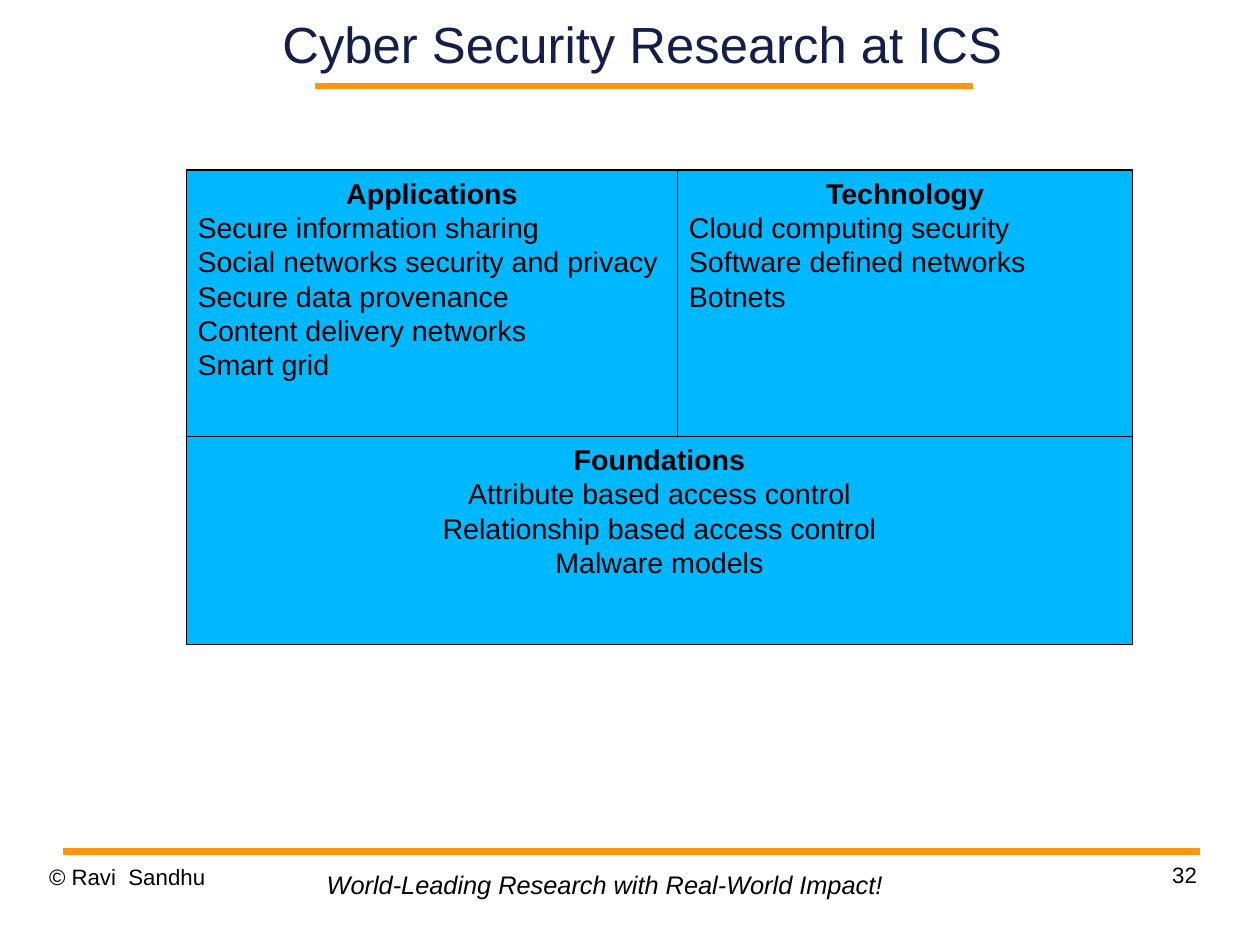
from lxml.etree import SubElement
from pptx import Presentation
from pptx.dml.color import RGBColor as RGB
from pptx.enum.shapes import MSO_CONNECTOR as Connector, MSO_SHAPE as Shape
from pptx.enum.text import MSO_ANCHOR as Anchor, PP_ALIGN as Align
from pptx.oxml.ns import qn
from pptx.util import Cm, Pt

# Content
TITLE = "Cyber Security Research at ICS"
APPLICATIONS = ("Applications", [
    "Secure information sharing",
    "Social networks security and privacy",
    "Secure data provenance",
    "Content delivery networks",
    "Smart grid",
])
TECHNOLOGY = ("Technology", [
    "Cloud computing security",
    "Software defined networks",
    "Botnets",
])
FOUNDATIONS = ("Foundations", [
    "Attribute based access control",
    "Relationship based access control",
    "Malware models",
])
COPYRIGHT = "© Ravi  Sandhu"
SLOGAN = "World-Leading Research with Real-World Impact!"
PAGE_NUMBER = "32"

THEME = {
    "font": "Arial",
    "title": RGB(0x13, 0x1F, 0x49),
    "text": RGB(0, 0, 0),
    "rule": RGB(0xFF, 0x95, 0x0E),
    "block": RGB(0x00, 0xB8, 0xFF),
    "title_size": 32,
    "block_size": 18,
    "slogan_size": 16,
    "footer_size": 14,
    "rule_width": 4.31,
    "border_width": 0.75,
}

# Layout in cm: block edges are shared by neighbours
LEFT, MIDDLE, RIGHT = 4.14, 15.06, 25.17
TOP, SPLIT, BOTTOM = 3.78, 9.7, 14.33
BLOCKS = [
    (FOUNDATIONS, LEFT, SPLIT, RIGHT, BOTTOM, Align.CENTER),
    (APPLICATIONS, LEFT, TOP, MIDDLE, SPLIT, Align.LEFT),
    (TECHNOLOGY, MIDDLE, TOP, RIGHT, SPLIT, Align.LEFT),
]
RULES = [(7.01, 21.62, 1.91), (1.4, 26.67, 18.92)]


def write(paragraph, text, size, color=THEME["text"], align=Align.LEFT,
          bold=False, italic=False, spacing=None):
    paragraph.alignment = align
    if spacing:
        paragraph.line_spacing = spacing
    run = paragraph.add_run()
    run.text = text
    font = run.font
    font.name, font.size = THEME["font"], Pt(size)
    font.bold, font.italic = bold, italic
    font.color.rgb = color


def add_text(slide, text, left, top, width, height, anchor=Anchor.TOP,
             inset=True, wrap=True, **text_format):
    box = slide.shapes.add_textbox(Cm(left), Cm(top), Cm(width), Cm(height))
    frame = box.text_frame
    frame.word_wrap, frame.vertical_anchor = wrap, anchor
    if not inset:
        frame.margin_left = frame.margin_right = 0
        frame.margin_top = frame.margin_bottom = 0
    write(frame.paragraphs[0], text, **text_format)


def add_rule(slide, start, end, y):
    line = slide.shapes.add_connector(
        Connector.STRAIGHT, Cm(start), Cm(y), Cm(end), Cm(y))
    line.line.color.rgb = THEME["rule"]
    line.line.width = Pt(THEME["rule_width"])
    SubElement(line._element.spPr, qn("a:effectLst"))


def add_block(slide, content, left, top, right, bottom, align):
    heading, topics = content
    block = slide.shapes.add_shape(
        Shape.RECTANGLE, Cm(left), Cm(top), Cm(right - left), Cm(bottom - top))
    block.shadow.inherit = False
    block.fill.solid()
    block.fill.fore_color.rgb = THEME["block"]
    block.line.color.rgb = THEME["text"]
    block.line.width = Pt(THEME["border_width"])
    frame = block.text_frame
    frame.word_wrap, frame.vertical_anchor = True, Anchor.TOP
    size = THEME["block_size"]
    write(frame.paragraphs[0], heading, size, align=Align.CENTER, bold=True)
    for topic in topics:
        write(frame.add_paragraph(), topic, size, align=align)


def main():
    presentation = Presentation()
    presentation.slide_width, presentation.slide_height = Cm(28), Cm(21)
    slide = presentation.slides.add_slide(presentation.slide_layouts[6])

    # Orange rules
    for rule in RULES:
        add_rule(slide, *rule)

    # Footer
    footer = {"size": THEME["footer_size"], "inset": False, "spacing": 1.01}
    add_text(slide, COPYRIGHT, 1.09, 19.18, 6.53, 1.45, **footer)
    add_text(slide, PAGE_NUMBER, 20.07, 19.13, 6.53, 1.45,
             align=Align.RIGHT, **footer)
    add_text(slide, SLOGAN, 7.01, 19.18, 12.9, 0.94, wrap=False,
             size=THEME["slogan_size"], italic=True)

    # Title
    add_text(slide, TITLE, 6.12, 0, 16.33, 1.91, anchor=Anchor.MIDDLE,
             inset=False, size=THEME["title_size"], color=THEME["title"],
             align=Align.CENTER)

    # Research areas
    for block in BLOCKS:
        add_block(slide, *block)

    presentation.save("out.pptx")


if __name__ == "__main__":
    main()
